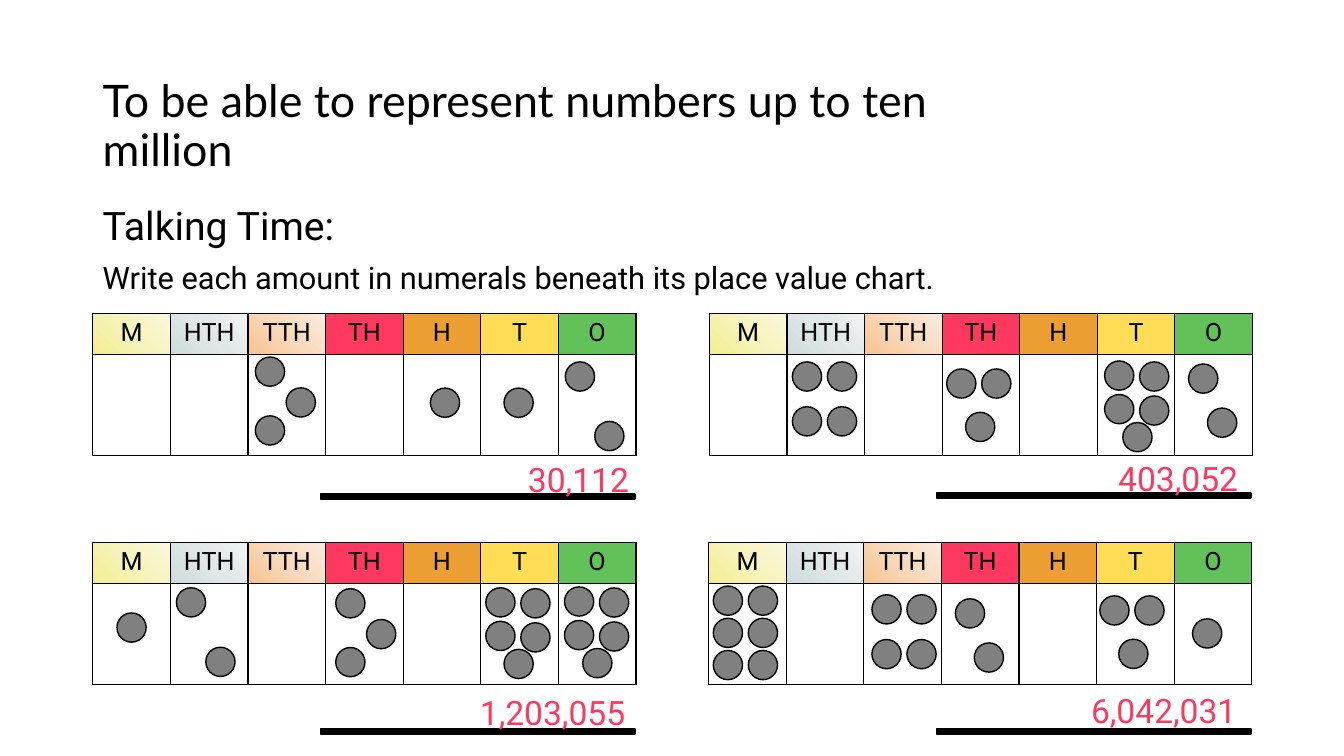
import pptx
import pptx.dml.color
import pptx.enum.shapes
import pptx.enum.text
import pptx.oxml
import pptx.oxml.ns
import pptx.util

Pt = pptx.util.Pt
ALIGN = pptx.enum.text.PP_ALIGN
FIT = pptx.enum.text.MSO_AUTO_SIZE
ANCHOR = pptx.enum.text.MSO_ANCHOR
KIND = pptx.enum.shapes.MSO_SHAPE
NS = pptx.oxml.ns.nsdecls("a")

# Column heading and its fill; three colours make a gradient
HEADS = [
    ("M", ["F3EE8E", "F6F3BB", "FAF8DE"]),
    ("HTH", ["CFDBDC", "E0E7E8", "EFF3F3"]),
    ("TTH", ["F7C48E", "F8D9BB", "FBECDE"]),
    ("TH", ["FF3860"]),
    ("H", ["EB9E31"]),
    ("T", ["FFDD57"]),
    ("O", ["62C159"]),
]

# Counter layouts, as offsets from the first counter
ONE = [(0, 0)]
SLANT = [(0, 0), (21, 42.5)]
STEEP = [(0, 0), (13.5, 31.5)]
ZIGZAG = [(0, 0), (0, 42), (22, 22)]
WEDGE = [(0, 0), (25, 0), (13.5, 31)]
FOUR = [(x, y) for y in (0, 32) for x in (0, 25)]
FIVE = [(0, 0), (25, 0.7), (0, 24), (25, 25), (13, 44)]
SIX = [(x, y) for y in (0, 23, 46) for x in (0, 25)]

# Chart corner, line top, answer with its box, and counter groups
CHARTS = [
    ((66.3, 223.9), (229, 352.8), "30,112", (365, 324, 96.5),
     [(ZIGZAG, 182.4, 255), (ONE, 307.4, 277.2), (ONE, 360, 277.2),
      (SLANT, 403.8, 258.5)]),
    ((506.7, 223.9), (668.9, 352.1), "403,052", (784, 323.3, 115.2),
     [(FOUR, 566, 258.5), (WEDGE, 676.2, 263.5), (FIVE, 789, 257.8),
      (STEEP, 849, 260)]),
    ((66.3, 387.4), (229, 520.6), "1,203,055", (327, 491, 135.4),
     [(ONE, 83.5, 437.8), (SLANT, 126, 419.8), (ZIGZAG, 239.8, 420.5),
      (FIVE, 347, 419.8), (FIVE, 403.2, 419.2)]),
    ((506.2, 387.4), (668.9, 520.6), "6,042,031", (762.5, 489, 137.5),
     [(SIX, 509.5, 418.6), (FOUR, 622.8, 424.8), (STEEP, 682.4, 427.7),
      (WEDGE, 785.6, 425.6), (ONE, 851.8, 442)]),
]


def tint(code):
    return pptx.dml.color.RGBColor.from_string(code)


def write(para, text, size=18, font="Roboto", ink="000000",
          align=ALIGN.CENTER, line=None, gap=None):
    para.alignment = align
    if line:
        para.line_spacing = line
    if gap is not None:
        para.space_before = Pt(gap)
    run = para.add_run()
    run.text = text
    run.font.size, run.font.name = Pt(size), font
    run.font.color.rgb = tint(ink)


class Board:
    ink = "000000"
    grey = "808080"
    pink = "FF3860"
    white = "FFFFFF"
    size = 20.9

    def __init__(self, slide):
        self.slide = slide
        self.shapes = slide.shapes

    def place(self, holder, left, top, width, height, anchor):
        holder.left, holder.top = Pt(left), Pt(top)
        holder.width, holder.height = Pt(width), Pt(height)
        frame = holder.text_frame
        frame.auto_size, frame.word_wrap = FIT.NONE, True
        frame.vertical_anchor = anchor
        return frame

    def title(self, text):
        frame = self.place(self.shapes.title, 66.2, 38.9, 691.2, 104.4,
                           ANCHOR.MIDDLE)
        write(frame.paragraphs[0], text, size=32, font="Lato",
              align=ALIGN.LEFT, line=0.9)

    def body(self, lines):
        frame = self.place(self.slide.placeholders[1], 66.2, 144, 828, 342.7,
                           ANCHOR.TOP)
        for i, (text, size) in enumerate(lines):
            para = frame.add_paragraph() if i else frame.paragraphs[0]
            props = para._p.get_or_add_pPr()
            props.set("marL", "0")
            props.set("indent", "0")
            props.append(pptx.oxml.parse_xml(f"<a:buNone {NS}/>"))
            write(para, text, size=size, align=ALIGN.LEFT, line=0.9,
                  gap=10 if i else 0)

    def shape(self, kind, left, top, width, height, fill):
        item = self.shapes.add_shape(kind, Pt(left), Pt(top),
                                     Pt(width), Pt(height))
        item.shadow.inherit = False
        item.fill.solid()
        item.fill.fore_color.rgb = tint(fill)
        item.line.color.rgb = tint(self.ink)
        item.line.width = Pt(1)

    def answer(self, text, left, top, width):
        box = self.shapes.add_textbox(Pt(left), Pt(top), Pt(width), Pt(36))
        box.text_frame.word_wrap = False
        box.text_frame.auto_size = FIT.SHAPE_TO_FIT_TEXT
        write(box.text_frame.paragraphs[0], text, size=24, ink=self.pink)

    def paint(self, cell, shades):
        """Give a cell black borders and a plain or radial fill."""
        props = cell._tc.get_or_add_tcPr()
        for side in "LRTB":
            props.append(pptx.oxml.parse_xml(
                f'<a:ln{side} {NS} w="12700"><a:solidFill>'
                f'<a:srgbClr val="{self.ink}"/></a:solidFill></a:ln{side}>'))
        if len(shades) == 1:
            cell.fill.solid()
            cell.fill.fore_color.rgb = tint(shades[0])
            return
        stops = "".join(
            f'<a:gs pos="{i * 50000}"><a:srgbClr val="{shade}"/></a:gs>'
            for i, shade in enumerate(shades))
        props.append(pptx.oxml.parse_xml(
            f'<a:gradFill {NS}><a:gsLst>{stops}</a:gsLst><a:path path="circle">'
            '<a:fillToRect t="100000" r="100000"/></a:path></a:gradFill>'))

    def chart(self, left, top):
        table = self.shapes.add_table(2, len(HEADS), Pt(left), Pt(top),
                                      Pt(388), Pt(101.5)).table
        table.first_row = table.horz_banding = False
        table.rows[0].height, table.rows[1].height = Pt(29.5), Pt(72)
        for i, (name, shades) in enumerate(HEADS):
            table.columns[i].width = Pt(55.44)
            head = table.cell(0, i)
            self.paint(head, shades)
            write(head.text_frame.paragraphs[0], name)
            self.paint(table.cell(1, i), [self.white])

    def group(self, dots, left, top):
        for x, y in dots:
            self.shape(KIND.OVAL, left + x, top + y, self.size, self.size,
                       self.grey)


def main():
    deck = pptx.Presentation()
    deck.slide_width, deck.slide_height = Pt(960), Pt(540)
    board = Board(deck.slides.add_slide(deck.slide_layouts[1]))
    board.title("To be able to represent numbers up to ten million")
    board.body([
        ("Talking Time:", 28),
        ("Write each amount in numerals beneath its place value chart.", 22),
    ])
    for corner, rule, text, box, groups in CHARTS:
        board.chart(*corner)
        board.shape(KIND.RECTANGLE, *rule, 224.6, 3.6, board.ink)
        for group in groups:
            board.group(*group)
        board.answer(text, *box)
    deck.save("out.pptx")


if __name__ == "__main__":
    main()
